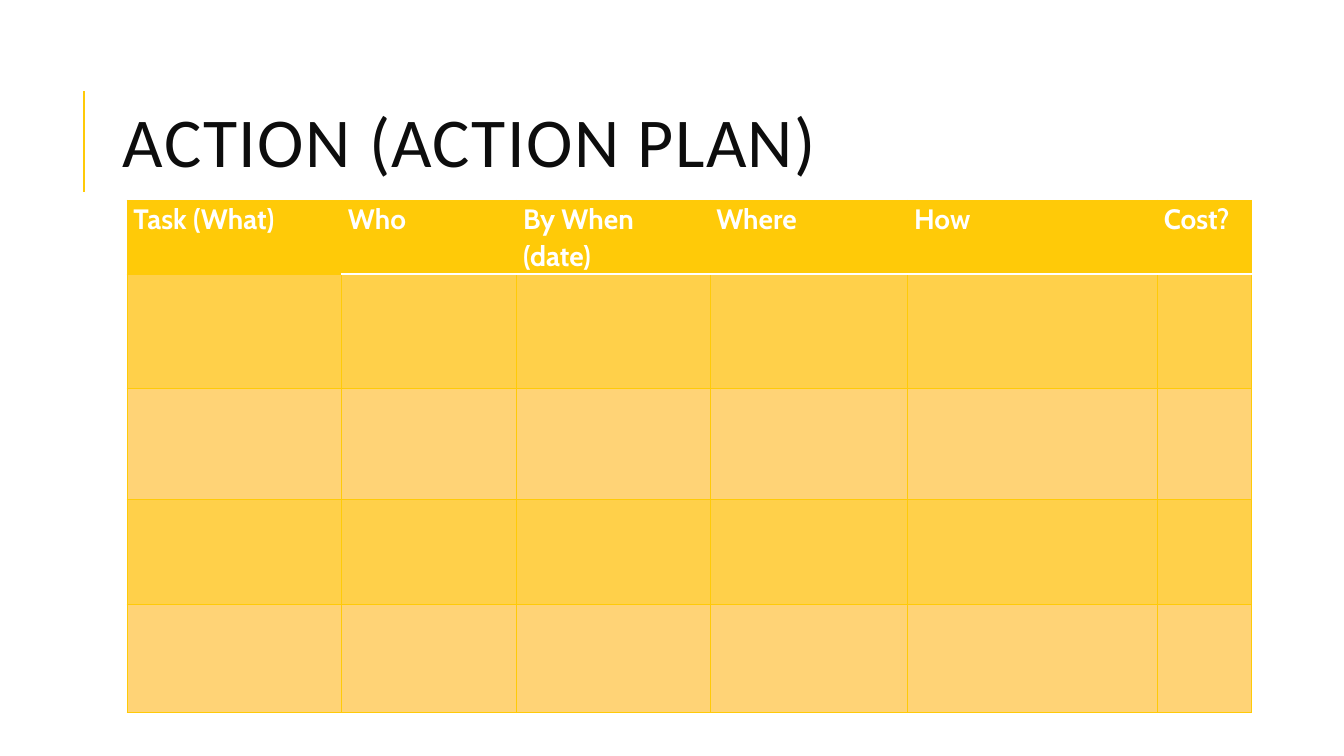
"""Build the action plan slide: a title, an accent line and an empty planning table."""
from dataclasses import dataclass

from lxml import etree
from pptx import Presentation
from pptx.dml.color import RGBColor
from pptx.enum.shapes import MSO_CONNECTOR
from pptx.enum.text import MSO_ANCHOR, MSO_AUTO_SIZE, PP_ALIGN
from pptx.oxml.ns import qn
from pptx.util import Pt

STRAIGHT = MSO_CONNECTOR.STRAIGHT
MIDDLE = MSO_ANCHOR.MIDDLE
LEFT = PP_ALIGN.LEFT
NO_AUTOFIT = MSO_AUTO_SIZE.NONE


@dataclass(frozen=True)
class Theme:
    """Colours, fonts and type sizes."""
    accent: str = "FFCA08"
    dark_band: str = "FFD04A"
    light_band: str = "FFD376"
    white: str = "FFFFFF"
    ink: str = "0D0D0D"
    title_font: str = "Calibri"
    table_font: str = "Cabin"
    title_size: int = 50
    header_size: int = 20


theme = Theme()


def add_span(para, text, font, size, color, bold=False):
    """Add one formatted run and return it."""
    span = para.add_run()
    span.text = text
    span.font.name = font
    span.font.size = Pt(size)
    span.font.bold = bold
    span.font.color.rgb = RGBColor.from_string(color)
    return span


def add_border(cell, side, color, width):
    """Draw one side of a cell; call in the order L, R, T, B before filling."""
    edge = etree.SubElement(cell._tc.get_or_add_tcPr(), qn(f"a:ln{side}"), w=str(Pt(width)))
    fill = etree.SubElement(edge, qn("a:solidFill"))
    etree.SubElement(fill, qn("a:srgbClr"), val=color)


deck = Presentation()
deck.slide_width, deck.slide_height = Pt(960), Pt(540)
page = deck.slides.add_slide(deck.slide_layouts[5])

accent_line = page.shapes.add_connector(STRAIGHT, Pt(60), Pt(136.8), Pt(60), Pt(64.8))
accent_line.line.color.rgb = RGBColor.from_string(theme.accent)
accent_line.line.width = Pt(1.5)
etree.SubElement(accent_line._element.spPr, qn("a:effectLst"))

title = page.shapes.title
title.left, title.top, title.width, title.height = Pt(80.6), Pt(46), Pt(813.6), Pt(118)
title_frame = title.text_frame
title_frame.word_wrap = True
title_frame.auto_size = NO_AUTOFIT
title_frame.vertical_anchor = MIDDLE
title_para = title_frame.paragraphs[0]
title_para.alignment = LEFT
title_para.line_spacing = 0.8
title_span = add_span(title_para, "ACTION (ACTION PLAN)", theme.title_font, theme.title_size, theme.ink)
title_span.font._element.set("spc", "100")

headers = ["Task (What)", "Who", "By When (date)", "Where", "How", "Cost?"]
column_widths = [153.2, 125.2, 138, 141.3, 178.4, 67]
row_heights = [52.7, 81.8, 79.2, 75, 77.3]

frame = page.shapes.add_table(len(row_heights), len(headers), Pt(90.8), Pt(143.1),
                              Pt(sum(column_widths)), Pt(sum(row_heights)))
table = frame.table
table.horz_banding = False
for column, width in zip(table.columns, column_widths):
    column.width = Pt(width)
for row, height in zip(table.rows, row_heights):
    row.height = Pt(height)

for row_index in range(len(row_heights)):
    for column_index, header in enumerate(headers):
        cell = table.cell(row_index, column_index)
        cell.margin_left = cell.margin_right = Pt(4.5)
        cell.margin_top = cell.margin_bottom = Pt(0)
        for side in "LRTB":
            under_header = (row_index, side) in [(0, "B"), (1, "T")]
            if under_header and column_index > 0:
                add_border(cell, side, theme.white, 1.25)
            else:
                add_border(cell, side, theme.accent, 0.75)
        if row_index == 0:
            color = theme.accent
            para = cell.text_frame.paragraphs[0]
            para.line_spacing = 1.07
            add_span(para, header, theme.table_font, theme.header_size, theme.white, True)
        else:
            color = theme.dark_band if row_index % 2 else theme.light_band
        cell.fill.solid()
        cell.fill.fore_color.rgb = RGBColor.from_string(color)

deck.save("out.pptx")
